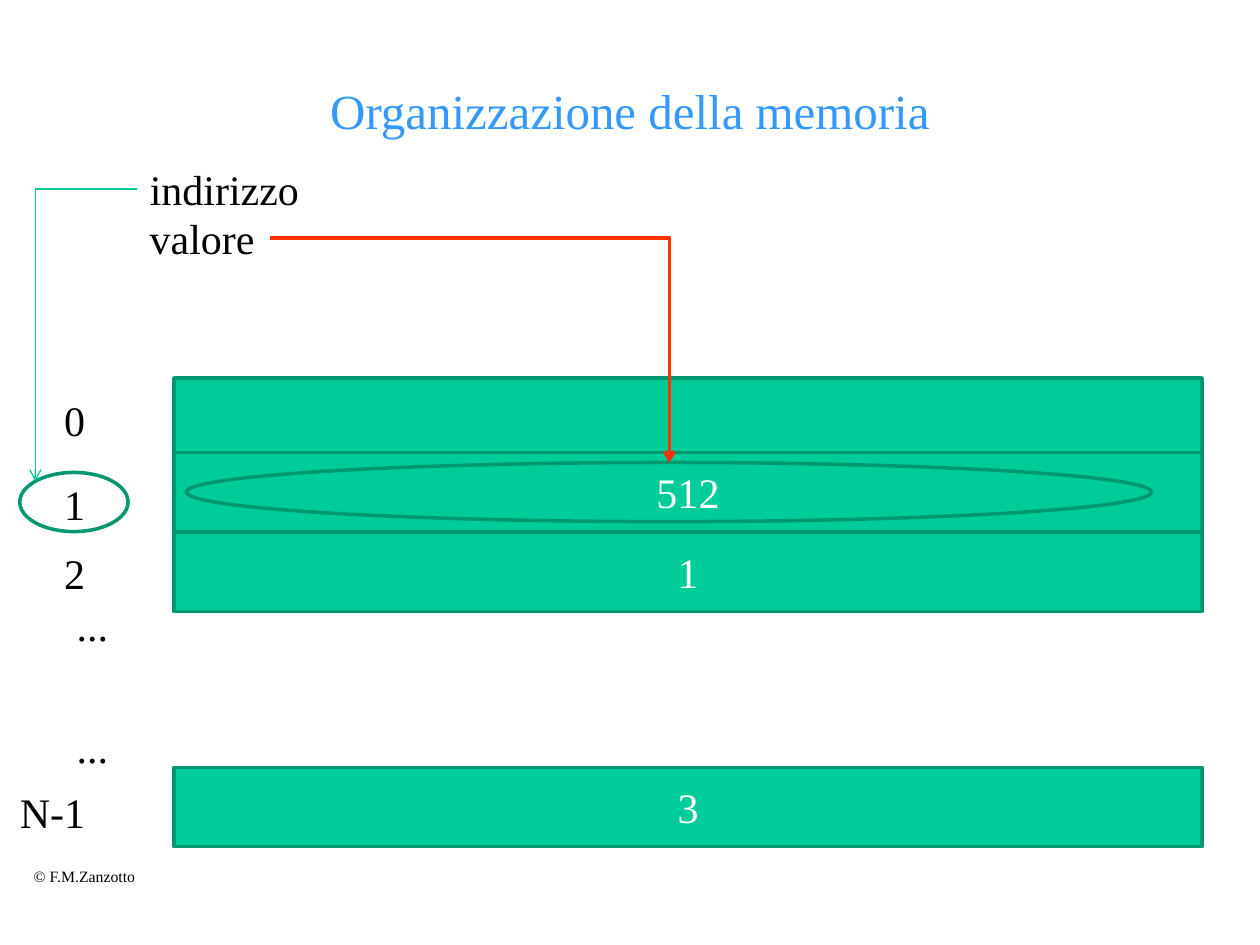
from lxml import etree
from pptx import Presentation
from pptx.dml.color import RGBColor
from pptx.enum import shapes as sh, text as tx
from pptx.oxml.ns import qn
from pptx.util import Pt


def rgb(code):
    return RGBColor.from_string(code)


def write(frame, words, size=24, color="000000", align=tx.PP_ALIGN.LEFT,
          anchor=tx.MSO_ANCHOR.TOP, wrap=False):
    frame.word_wrap = wrap
    frame.vertical_anchor = anchor
    para = frame.paragraphs[0]
    para.alignment = align
    run = para.add_run()
    run.text = words
    run.font.name = "Times New Roman"
    run.font.size = Pt(size)
    run.font.color.rgb = rgb(color)


deck = Presentation()
deck.slide_width, deck.slide_height = Pt(720), Pt(540)
slide = deck.slides.add_slide(deck.slide_layouts[5])
items = slide.shapes
mid = dict(align=tx.PP_ALIGN.CENTER, anchor=tx.MSO_ANCHOR.MIDDLE, wrap=True)

title = items.title
title.left, title.top, title.width, title.height = Pt(54), Pt(36), Pt(612), Pt(54)
write(title.text_frame, "Organizzazione della memoria", size=28, color="3399FF", **mid)

labels = [
    ("0", 29.5, 222, 26.5, 24),
    ("1", 29.5, 270, 26.5, 24),
    ("2", 29.5, 309.5, 26.5, 24),
    ("N-1", 4.3, 446, 52.5, 24),
    ("...", 36.7, 339, 32.5, 24),
    ("...", 36.7, 408.5, 32.5, 24),
    ("indirizzo", 78.5, 90, 101, 24),
    ("valore", 78.5, 118, 75, 24),
    ("© F.M.Zanzotto", 12.2, 492, 73.5, 9),
]
for words, left, top, width, size in labels:
    box = items.add_textbox(Pt(left), Pt(top), Pt(width), Pt(size * 1.5))
    write(box.text_frame, words, size=size)

rect, oval = sh.MSO_SHAPE.RECTANGLE, sh.MSO_SHAPE.OVAL
forms = [(rect, 99.4, top, 587.5, 45.4, words)
         for top, words in [(216, ""), (258.5, "512"), (304, "1"), (438.5, "3")]]
forms += [(oval, 106.5, 264.3, 551.5, 33.8, ""), (oval, 11.3, 270, 61.9, 33.8, "")]
for kind, left, top, width, height, words in forms:
    form = items.add_shape(kind, Pt(left), Pt(top), Pt(width), Pt(height))
    form.shadow.inherit = False
    form.line.color.rgb = rgb("009771")
    form.line.width = Pt(2)
    if kind == rect:
        form.fill.solid()
        form.fill.fore_color.rgb = rgb("00CC99")
    else:
        form.fill.background()
    if words:
        write(form.text_frame, words, color="FFFFFF", **mid)

arrows = [(78.5, 108, 20.2, 275, "00C896", 0.75), (154, 136, 382.5, 264.3, "FF3300", 2)]
for left, top, right, low, color, width in arrows:
    arrow = items.add_connector(sh.MSO_CONNECTOR.ELBOW, Pt(left), Pt(top), Pt(right), Pt(low))
    arrow.line.color.rgb = rgb(color)
    arrow.line.width = Pt(width)
    props = arrow.element.spPr
    props.find(qn("a:prstGeom")).set("prst", "bentConnector2")
    etree.SubElement(props.find(qn("a:ln")), qn("a:tailEnd"), type="arrow")
    etree.SubElement(props, qn("a:effectLst"))

deck.save("out.pptx")
